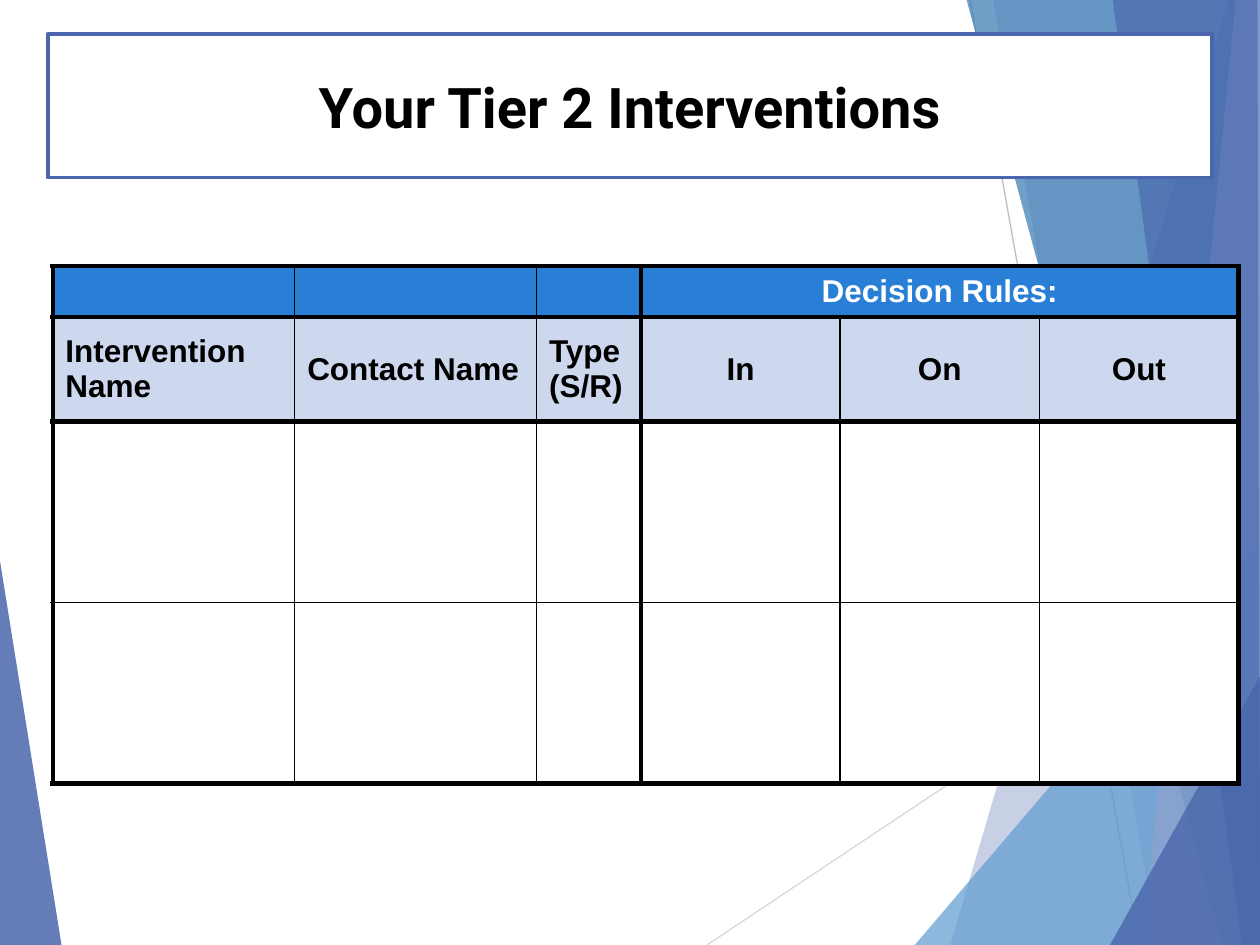
from lxml.etree import SubElement
from pptx import Presentation
from pptx.dml.color import RGBColor
from pptx.enum.shapes import MSO_CONNECTOR, MSO_SHAPE
from pptx.enum.text import MSO_ANCHOR, PP_ALIGN
from pptx.oxml.ns import qn
from pptx.util import Pt

BLACK = RGBColor(0x00, 0x00, 0x00)
WHITE = RGBColor(0xFF, 0xFF, 0xFF)
INDIGO = RGBColor(0x4A, 0x66, 0xAC)
SKY = RGBColor(0x62, 0x9D, 0xD1)
TEAL = RGBColor(0x34, 0x77, 0xB2)
LAVENDER = RGBColor(0x90, 0xA2, 0xCF)
LIGHT_GRAY = RGBColor(0xD9, 0xD9, 0xD9)
GRAY = RGBColor(0xBF, 0xBF, 0xBF)
HEADER_BLUE = RGBColor(0x29, 0x7F, 0xD5)
PALE_BLUE = RGBColor(0xCD, 0xD8, 0xEF)

WIDTH, HEIGHT = 720, 540
THICK, THIN = 3, 1

FACETS = [
    ([(-0.7, 316), (35.3, 540.7), (-0.7, 540)], INDIGO, 85),
    ([(702, 0), (543, 540), (721, 540), (721, 0)], INDIGO, 30),
    ([(567.4, -0.7), (661.7, 540), (720.7, 540), (720.7, -0.7)], INDIGO, 20),
    ([(522.7, 540), (720, 308.9), (720.7, 540)], SKY, 72),
    ([(552.2, -0.7), (698.4, 540), (720.7, 540), (720.7, -0.7)], TEAL, 70),
    ([(706.3, -0.7), (653, 540), (720.7, 540), (720, -0.7)], LAVENDER, 70),
    ([(635.8, -0.7), (709.9, 540), (720, 540), (718.6, -0.7)], INDIGO, 65),
    ([(634.3, 540), (720.7, 385.2), (720.7, 540)], INDIGO, 80),
]
RAYS = [((404, 540), (720.7, 329), LIGHT_GRAY), ((554.4, 0), (650.9, 540), GRAY)]

COLUMN_WIDTHS = [138.2, 138.2, 59.8, 113.8, 113.8, 113.8]
ROW_HEIGHTS = [28.6, 59.8, 103.5, 103.5]
ROW_FILLS = [HEADER_BLUE, PALE_BLUE, WHITE, WHITE]
LABELS = ["Intervention Name", "Contact Name", "Type\n(S/R)", "In", "On", "Out"]
RULES_COLUMN = 3
THICK_ROW_EDGES = {0, 1, 2, 4}
THICK_COLUMN_EDGES = {0, RULES_COLUMN, 6}


class SlideBuilder:
    title_font = "Roboto"
    table_font = "Arial"

    def __init__(self, slide):
        self.slide = slide

    def facet(self, points, color, opacity):
        corners = [(Pt(x), Pt(y)) for x, y in points]
        builder = self.slide.shapes.build_freeform(*corners[0])
        builder.add_line_segments(corners[1:], close=True)
        shape = builder.convert_to_shape()
        shape.shadow.inherit = False
        shape.fill.solid()
        shape.fill.fore_color.rgb = color
        shape.line.fill.background()
        fill_color = shape._element.spPr.find(qn("a:solidFill"))[0]
        SubElement(fill_color, qn("a:alpha"), val=str(opacity * 1000))

    def ray(self, start, end, color):
        ends = [Pt(value) for value in (*start, *end)]
        connector = self.slide.shapes.add_connector(MSO_CONNECTOR.STRAIGHT, *ends)
        connector.line.color.rgb = color
        connector.line.width = Pt(0.75)
        SubElement(connector._element.spPr, qn("a:effectLst"))

    def set_text(self, text_frame, text, font_name, size, color, alignment):
        text_frame.text = text
        for paragraph in text_frame.paragraphs:
            paragraph.alignment = alignment
            for run in paragraph.runs:
                run.font.name = font_name
                run.font.size = Pt(size)
                run.font.bold = True
                run.font.color.rgb = color

    def title(self, text, left, top, width, height):
        shape = self.slide.shapes.add_shape(
            MSO_SHAPE.RECTANGLE, Pt(left), Pt(top), Pt(width), Pt(height))
        shape.shadow.inherit = False
        shape.fill.solid()
        shape.fill.fore_color.rgb = WHITE
        shape.line.color.rgb = INDIGO
        shape.line.width = Pt(2.25)
        shape.text_frame.vertical_anchor = MSO_ANCHOR.MIDDLE
        self.set_text(shape.text_frame, text, self.title_font, 32, BLACK, PP_ALIGN.CENTER)

    def table(self, left, top, widths, heights):
        frame = self.slide.shapes.add_table(
            len(heights), len(widths),
            Pt(left), Pt(top), Pt(sum(widths)), Pt(sum(heights)))
        table = frame.table
        table.first_row = False
        table.horz_banding = False
        for column, width in zip(table.columns, widths):
            column.width = Pt(width)
        for row, height in zip(table.rows, heights):
            row.height = Pt(height)
        return table

    def cell(self, cell, fill, borders):
        properties = cell._tc.get_or_add_tcPr()
        for side, width in borders.items():
            line = SubElement(properties, qn(f"a:ln{side}"), w=str(Pt(width)))
            SubElement(SubElement(line, qn("a:solidFill")), qn("a:srgbClr"), val=str(BLACK))
        cell.fill.solid()
        cell.fill.fore_color.rgb = fill
        cell.vertical_anchor = MSO_ANCHOR.MIDDLE

    def label(self, cell, text, color, alignment):
        self.set_text(cell.text_frame, text, self.table_font, 18, color, alignment)


def cell_borders(row, column):
    in_banner = row == 0 and column >= RULES_COLUMN

    def vertical(edge):
        return THICK if in_banner or edge in THICK_COLUMN_EDGES else THIN

    def horizontal(edge):
        return THICK if edge in THICK_ROW_EDGES else THIN

    return {"L": vertical(column), "R": vertical(column + 1),
            "T": horizontal(row), "B": horizontal(row + 1)}


def main():
    presentation = Presentation()
    presentation.slide_width = Pt(WIDTH)
    presentation.slide_height = Pt(HEIGHT)
    builder = SlideBuilder(presentation.slides.add_slide(presentation.slide_layouts[6]))

    left_facet, *right_facets = FACETS
    builder.facet(*left_facet)
    for ray in RAYS:
        builder.ray(*ray)
    for facet in right_facets:
        builder.facet(*facet)

    builder.title("Your Tier 2 Interventions", 27.4, 19.4, 665.3, 82.1)

    table = builder.table(30.2, 151.9, COLUMN_WIDTHS, ROW_HEIGHTS)
    for row, fill in enumerate(ROW_FILLS):
        for column in range(len(COLUMN_WIDTHS)):
            builder.cell(table.cell(row, column), fill, cell_borders(row, column))

    banner = table.cell(0, RULES_COLUMN)
    banner.merge(table.cell(0, len(COLUMN_WIDTHS) - 1))
    builder.label(banner, "Decision Rules:", WHITE, PP_ALIGN.CENTER)
    for column, text in enumerate(LABELS):
        alignment = PP_ALIGN.LEFT if column < RULES_COLUMN else PP_ALIGN.CENTER
        builder.label(table.cell(1, column), text, BLACK, alignment)

    presentation.save("out.pptx")


if __name__ == "__main__":
    main()
